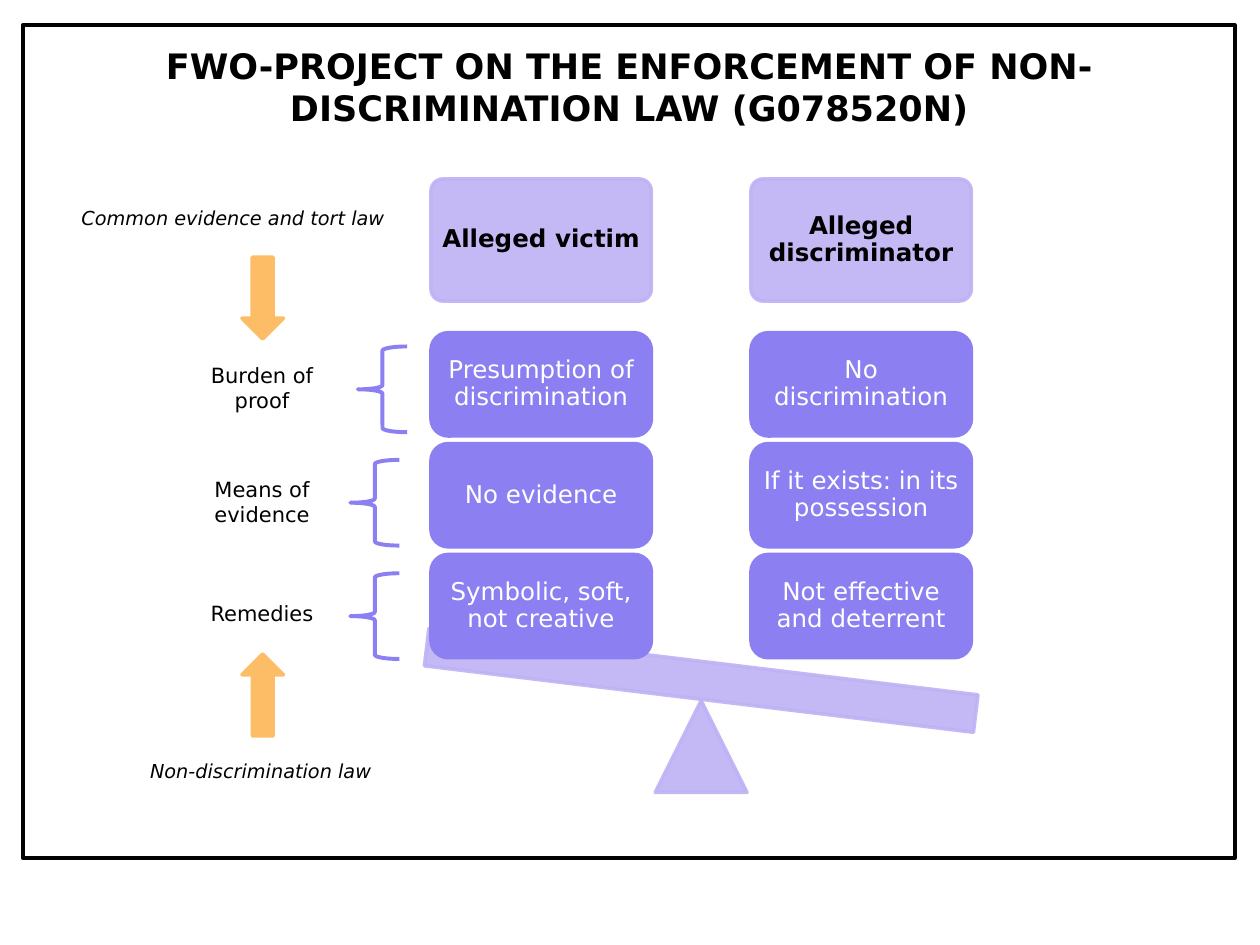
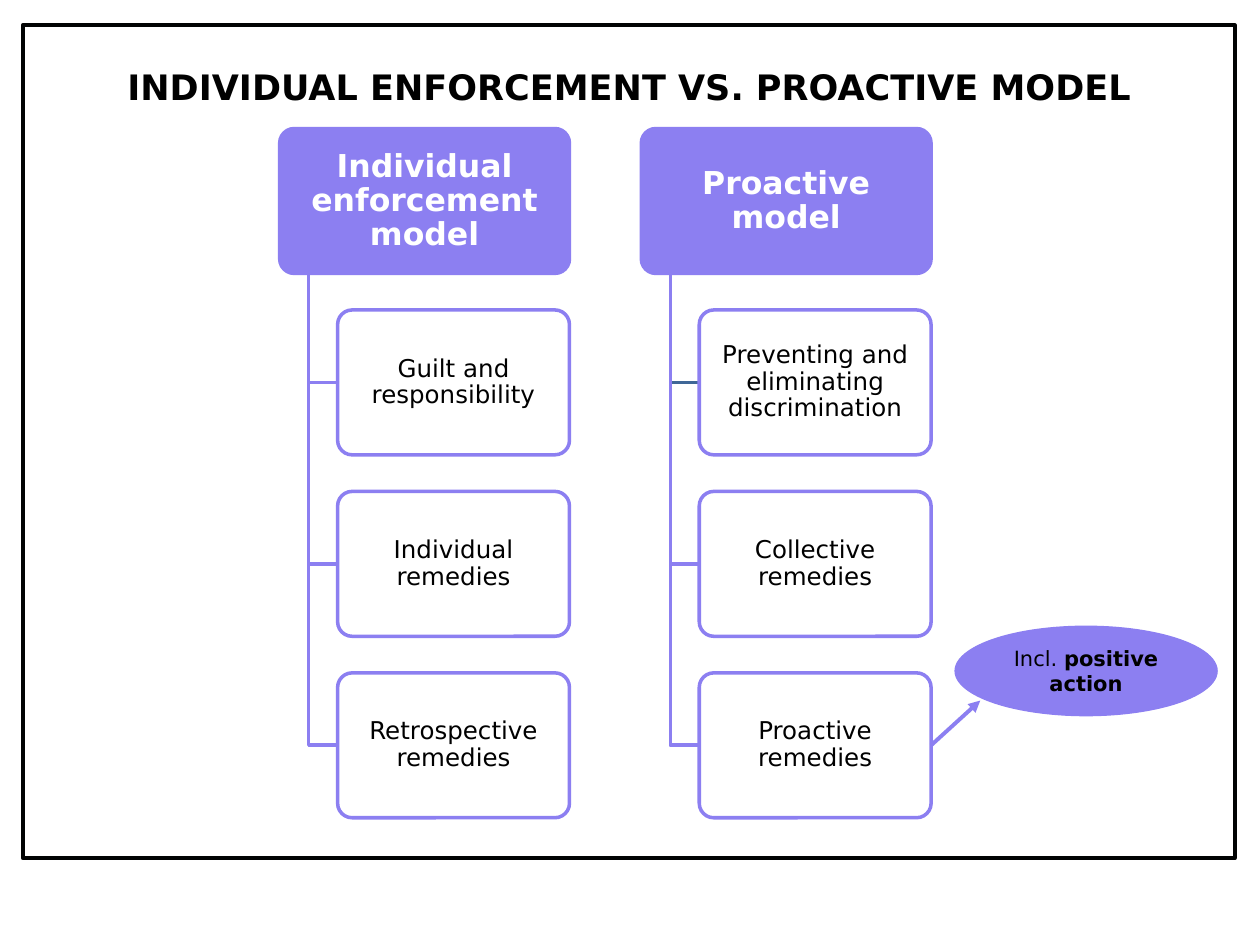
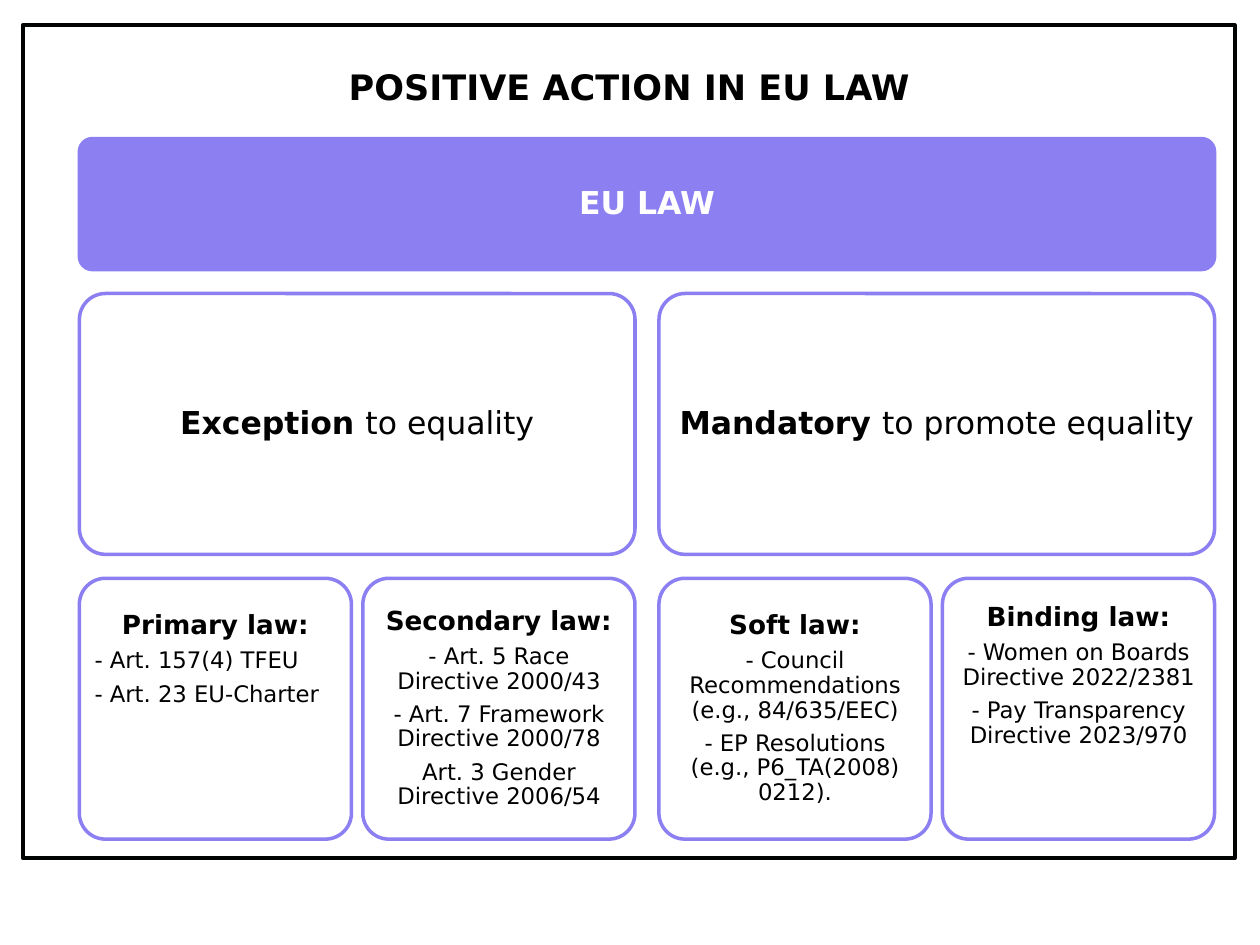
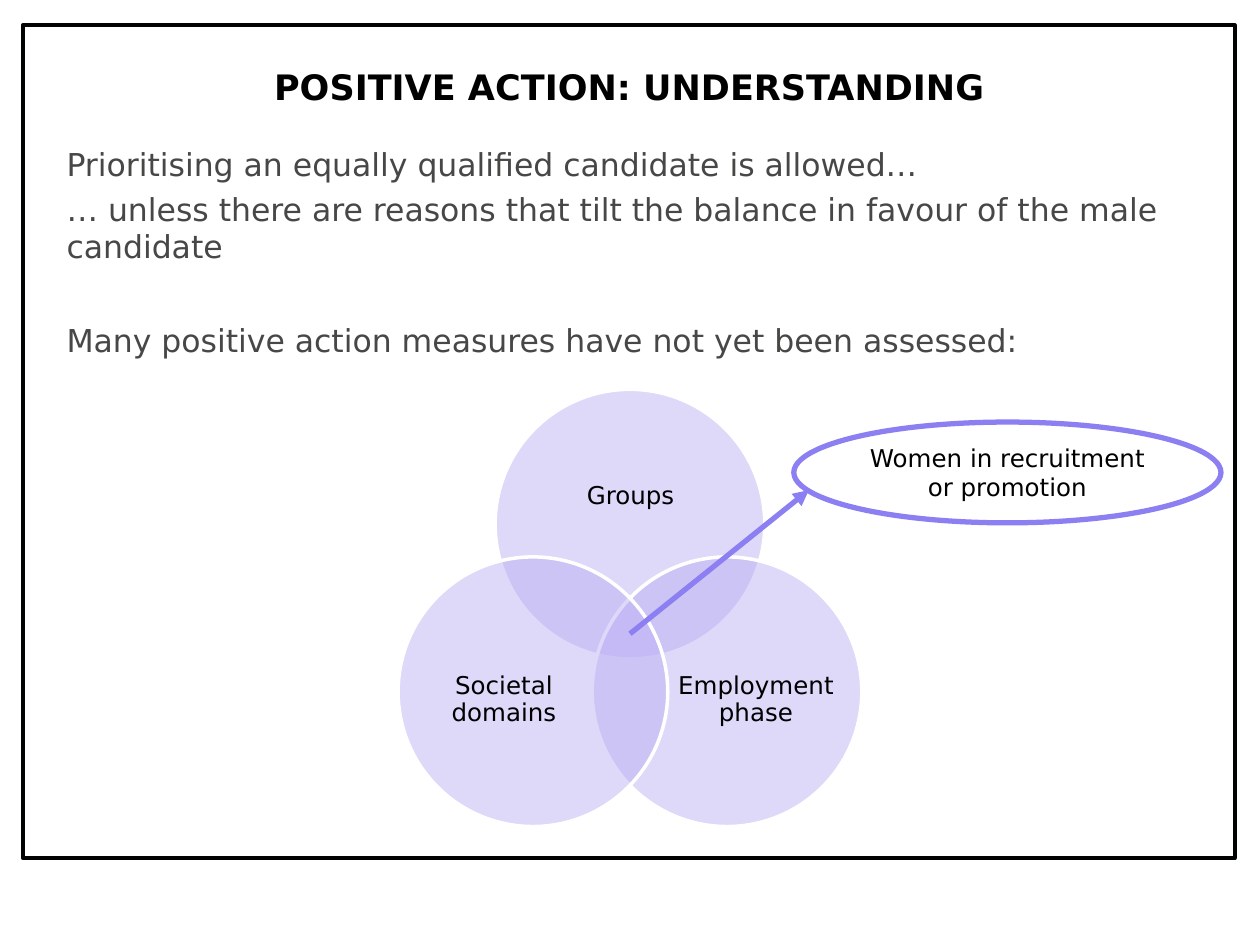
from lxml.etree import SubElement
from pptx import Presentation
from pptx.dml.color import RGBColor
from pptx.enum.shapes import MSO_CONNECTOR, MSO_SHAPE
from pptx.enum.text import MSO_ANCHOR, MSO_AUTO_SIZE, PP_ALIGN
from pptx.oxml.ns import qn
from pptx.util import Inches, Pt

FONT = "DejaVu Sans"
BLACK = RGBColor(0x00, 0x00, 0x00)
WHITE = RGBColor(0xFF, 0xFF, 0xFF)
GREY = RGBColor(0x47, 0x47, 0x46)
FRAME = RGBColor(0x01, 0x03, 0x03)
PURPLE = RGBColor(0x8C, 0x7F, 0xF1)
LILAC = RGBColor(0xBE, 0xB2, 0xF5)
ORANGE = RGBColor(0xFC, 0xBD, 0x66)
BLUE = RGBColor(0x3F, 0x67, 0x97)


def add_box(slide, kind, at, fill=None, line=PURPLE, width=2.0, opacity=100, corner=None):
    """Add a preset shape, or a plain text box when kind is None."""
    position = [Inches(length) for length in at]
    if kind is None:
        return slide.shapes.add_textbox(*position)
    shape = slide.shapes.add_shape(kind, *position)
    shape.shadow.inherit = False
    shape.line.color.rgb = line
    shape.line.width = Pt(width)
    if corner is not None:
        shape.adjustments[0] = corner
    if fill is None:
        shape.fill.background()
        return shape
    shape.fill.solid()
    shape.fill.fore_color.rgb = fill
    if opacity < 100:
        # An outline in the colour of the fill is just as transparent
        for color in shape._element.spPr.iter(qn("a:srgbClr")):
            if color.get("val") == str(fill):
                SubElement(color, qn("a:alpha"), val=str(opacity * 1000))
    return shape


def write(shape, paragraphs, color=BLACK, margins=(0.1, 0.05), spacing=0.9, after=5,
          align=PP_ALIGN.CENTER, anchor=MSO_ANCHOR.MIDDLE, italic=False):
    """Fill a shape with paragraphs, each a list of (text, size, bold) runs."""
    frame = shape.text_frame
    frame.word_wrap = True
    frame.auto_size = MSO_AUTO_SIZE.NONE
    frame.vertical_anchor = anchor
    frame.margin_left = frame.margin_right = Inches(margins[0])
    frame.margin_top = frame.margin_bottom = Inches(margins[1])
    for index, runs in enumerate(paragraphs):
        paragraph = frame.add_paragraph() if index else frame.paragraphs[0]
        paragraph.alignment = align
        paragraph.line_spacing = spacing
        paragraph.space_before = Pt(0)
        paragraph.space_after = Pt(after)
        for text, size, bold in runs:
            run = paragraph.add_run()
            run.text = text
            font_format = {"name": FONT, "size": Pt(size), "bold": bold, "italic": italic}
            for name, value in font_format.items():
                setattr(run.font, name, value)
            run.font.color.rgb = color


presentation = Presentation()
presentation.slide_width = Inches(10)
presentation.slide_height = Inches(7.5)
layout = presentation.slide_layouts[5]

# Slides with their titles
titles = [
    "FWO-PROJECT ON THE ENFORCEMENT OF NON- DISCRIMINATION LAW (G078520N)",
    "INDIVIDUAL ENFORCEMENT VS. PROACTIVE MODEL",
    "POSITIVE ACTION IN EU LAW",
    "POSITIVE ACTION: UNDERSTANDING",
]
title_place = {"left": 0.43, "top": 0.39, "width": 9.13, "height": 0.6}
slides = []
for text in titles:
    slide = presentation.slides.add_slide(layout)
    for name, value in title_place.items():
        setattr(slide.shapes.title, name, Inches(value))
    write(slide.shapes.title, [[(text, 20, True)]], spacing=1.0, after=0)
    slides.append(slide)
balance_slide, models_slide, law_slide, circles_slide = slides

# Frame shared by all slides, moved to the layout
frame_shape = add_box(balance_slide, MSO_SHAPE.RECTANGLE, (0.18, 0.2, 9.62, 6.61), line=FRAME, width=2.25)
layout.shapes._spTree.insert(2, frame_shape._element)

# Slide 1: the balance
lilac = {"fill": LILAC, "line": LILAC, "opacity": 90}
add_box(balance_slide, MSO_SHAPE.ISOSCELES_TRIANGLE, (5.2, 5.56, 0.73, 0.73), **lilac)
beam = add_box(balance_slide, MSO_SHAPE.RECTANGLE, (3.37, 5.25, 4.39, 0.3), **lilac)
beam.rotation = 6.9

parties = [
    ("Alleged victim", ["Presumption of discrimination", "No evidence", "Symbolic, soft, not creative"]),
    ("Alleged discriminator", ["No discrimination", "If it exists: in its possession", "Not effective and deterrent"]),
]
for column, (party, weights) in enumerate(parties):
    left = 3.42 + 2.54 * column
    header = add_box(balance_slide, MSO_SHAPE.ROUNDED_RECTANGLE, (left, 1.42, 1.75, 0.97), corner=0.1, **lilac)
    write(header, [[(party, 14, True)]], margins=(0.06, 0.06))
    for row, weight in enumerate(weights):
        box = add_box(balance_slide, MSO_SHAPE.ROUNDED_RECTANGLE,
                      (left, 2.64 + 0.88 * row, 1.75, 0.82), PURPLE)
        write(box, [[(weight, 14, False)]], WHITE, margins=(0.06, 0.06))

# Slide 1: braces with their labels
topics = [("Burden of proof", 2.84, 2.83, 0.5), ("Means of evidence", 2.78, 3.73, 0.5), ("Remedies", 2.78, 4.72, 0.3)]
for row, (topic, brace_left, label_top, label_height) in enumerate(topics):
    add_box(balance_slide, MSO_SHAPE.LEFT_BRACE, (brace_left, 2.75 + 0.9 * row, 0.39, 0.68), width=2.25)
    label = add_box(balance_slide, None, (1.5, label_top, 1.16, label_height))
    write(label, [[(topic, 12, False)]], spacing=1.0, after=0, anchor=MSO_ANCHOR.TOP)

# Slide 1: bodies of law and their arrows
laws = [("Common evidence and tort law", 0.47, 1.59, 2.04, 0), ("Non-discrimination law", 0.69, 5.98, 5.19, 180)]
for law, left, top, arrow_top, rotation in laws:
    label = add_box(balance_slide, None, (left, top, 2.76, 0.29))
    write(label, [[(law, 11, False)]], spacing=1.0, after=0, anchor=MSO_ANCHOR.TOP, italic=True)
    arrow = add_box(balance_slide, MSO_SHAPE.DOWN_ARROW, (1.92, arrow_top, 0.33, 0.65), ORANGE, ORANGE)
    arrow.rotation = rotation

# Slide 2: two models, each a header with a tree of boxes
models = [
    ("Individual enforcement model", ["Guilt and responsibility", "Individual remedies", "Retrospective remedies"]),
    ("Proactive model", ["Preventing and eliminating discrimination", "Collective remedies", "Proactive remedies"]),
]
box_height = 1.15
row_step = 1.44
for column, (model, features) in enumerate(models):
    left = 2.22 + 2.87 * column
    header = add_box(models_slide, MSO_SHAPE.ROUNDED_RECTANGLE, (left, 1.02, 2.3, box_height), PURPLE, corner=0.1)
    write(header, [[(model, 18, True)]], WHITE, margins=(0.04, 0.03))
    for row, feature in enumerate(features, start=1):
        top = 1.02 + row_step * row
        stem, middle = Inches(left + 0.23), Inches(top + box_height / 2)
        builder = models_slide.shapes.build_freeform(stem, Inches(1.02 + box_height))
        builder.add_line_segments([(stem, middle), (Inches(left + 0.46), middle)], close=False)
        branch = builder.convert_to_shape()
        branch.shadow.inherit = False
        branch.fill.background()
        branch.line.color.rgb = BLUE if (column, row) == (1, 1) else PURPLE
        branch.line.width = Pt(2)
        feature_box = add_box(models_slide, MSO_SHAPE.ROUNDED_RECTANGLE, (left + 0.46, top, 1.84, box_height),
                              WHITE, opacity=90, corner=0.1)
        write(feature_box, [[(feature, 14, False)]], margins=(0.03, 0.02))
proactive_box = feature_box

# Slide 3: EU law, two views and four groups of sources
banner = add_box(law_slide, MSO_SHAPE.ROUNDED_RECTANGLE, (0.63, 1.1, 9.01, 1.04), PURPLE, corner=0.1)
write(banner, [[("EU LAW", 18, True)]], WHITE, margins=(0.07, 0.07))

# Each group: heading, sources, alignment of the sources, free lines below
views = [
    ("Exception ", "to equality", [
        ("Primary law:", ["- Art. 157(4) TFEU", "- Art. 23 EU-Charter"], PP_ALIGN.LEFT, 3),
        ("Secondary law:", ["- Art. 5 Race Directive 2000/43", "- Art. 7 Framework Directive 2000/78",
                            "Art. 3 Gender Directive 2006/54"], PP_ALIGN.CENTER, 0),
    ]),
    ("Mandatory ", "to promote equality", [
        ("Soft law:", ["- Council Recommendations (e.g., 84/635/EEC)",
                       "- EP Resolutions (e.g., P6_TA(2008) 0212)."], PP_ALIGN.CENTER, 0),
        ("Binding law:", ["- Women on Boards Directive 2022/2381",
                          "- Pay Transparency Directive 2023/970"], PP_ALIGN.CENTER, 2),
    ]),
]
for half, (keyword, rest, groups) in enumerate(views):
    left = 0.63 + 4.6 * half
    view_box = add_box(law_slide, MSO_SHAPE.ROUNDED_RECTANGLE, (left, 2.33, 4.41, 2.07), WHITE, corner=0.1)
    write(view_box, [[(keyword, 18, True), (rest, 18, False)]], margins=(0.07, 0.07))
    for column, (heading, sources, align, free_lines) in enumerate(groups):
        group_box = add_box(law_slide, MSO_SHAPE.ROUNDED_RECTANGLE, (left + 2.25 * column, 4.59, 2.16, 2.07),
                            WHITE, corner=0.1)
        paragraphs = [[(heading, 15, True)]] + [[(source, 13, False)] for source in sources]
        write(group_box, paragraphs, margins=(0.06, 0.06), align=align)
        group_box.text_frame.paragraphs[0].alignment = PP_ALIGN.CENTER
        group_box.text_frame.margin_bottom = Inches(0.06 + 0.26 * free_lines)

# Slide 4: statements
body = add_box(circles_slide, None, (0.43, 1.1, 9.13, 1.9))
statements = [
    "Prioritising an equally qualified candidate is allowed…",
    "… unless there are reasons that tilt the balance in favour of the male candidate",
    "Many positive action measures have not yet been assessed:",
]
write(body, [[(statement, 18, False)] for statement in statements], GREY,
      spacing=1.0, after=0, align=PP_ALIGN.LEFT, anchor=MSO_ANCHOR.TOP)
for paragraph, gap in zip(body.text_frame.paragraphs[1:], (4, 32)):
    paragraph.space_before = Pt(gap)

# Slide 4: overlapping circles
circles = [
    ("Groups", 3.93, 3.09, (4.22, 3.46, 1.57, 0.96)),
    ("Employment phase", 4.7, 4.42, (5.36, 4.97, 1.28, 1.17)),
    ("Societal domains", 3.16, 4.42, (3.36, 4.97, 1.28, 1.17)),
]
for name, left, top, label_place in circles:
    add_box(circles_slide, MSO_SHAPE.OVAL, (left, top, 2.14, 2.14), LILAC, WHITE, opacity=50)
    label = add_box(circles_slide, None, label_place)
    write(label, [[(name, 14, False)]], margins=(0, 0))

# Slides 2 and 4: oval callouts with arrows
callouts = [
    (models_slide, (7.58, 4.97, 2.08, 0.71), PURPLE, 0.75, [("Incl. ", 12, False), ("positive action", 12, True)],
     (7.39, 5.91, 7.78, 5.56), 2.25, proactive_box),
    (circles_slide, (6.3, 3.35, 3.39, 0.8), None, 3, [("Women in recruitment or promotion", 14, False)],
     (5, 5.03, 6.42, 3.89), 3, None),
]
for slide, place, fill, outline, runs, ends, width, start_box in callouts:
    oval = add_box(slide, MSO_SHAPE.OVAL, place, fill, width=outline)
    write(oval, [runs], spacing=1.0, after=0)
    arrow = slide.shapes.add_connector(MSO_CONNECTOR.STRAIGHT, *[Inches(end) for end in ends])
    if start_box is not None:
        arrow.begin_connect(start_box, 3)
    arrow.line.color.rgb = PURPLE
    arrow.line.width = Pt(width)
    SubElement(arrow.line._get_or_add_ln(), qn("a:tailEnd"), type="triangle")
    SubElement(arrow._element.spPr, qn("a:effectLst"))

presentation.save("out.pptx")
